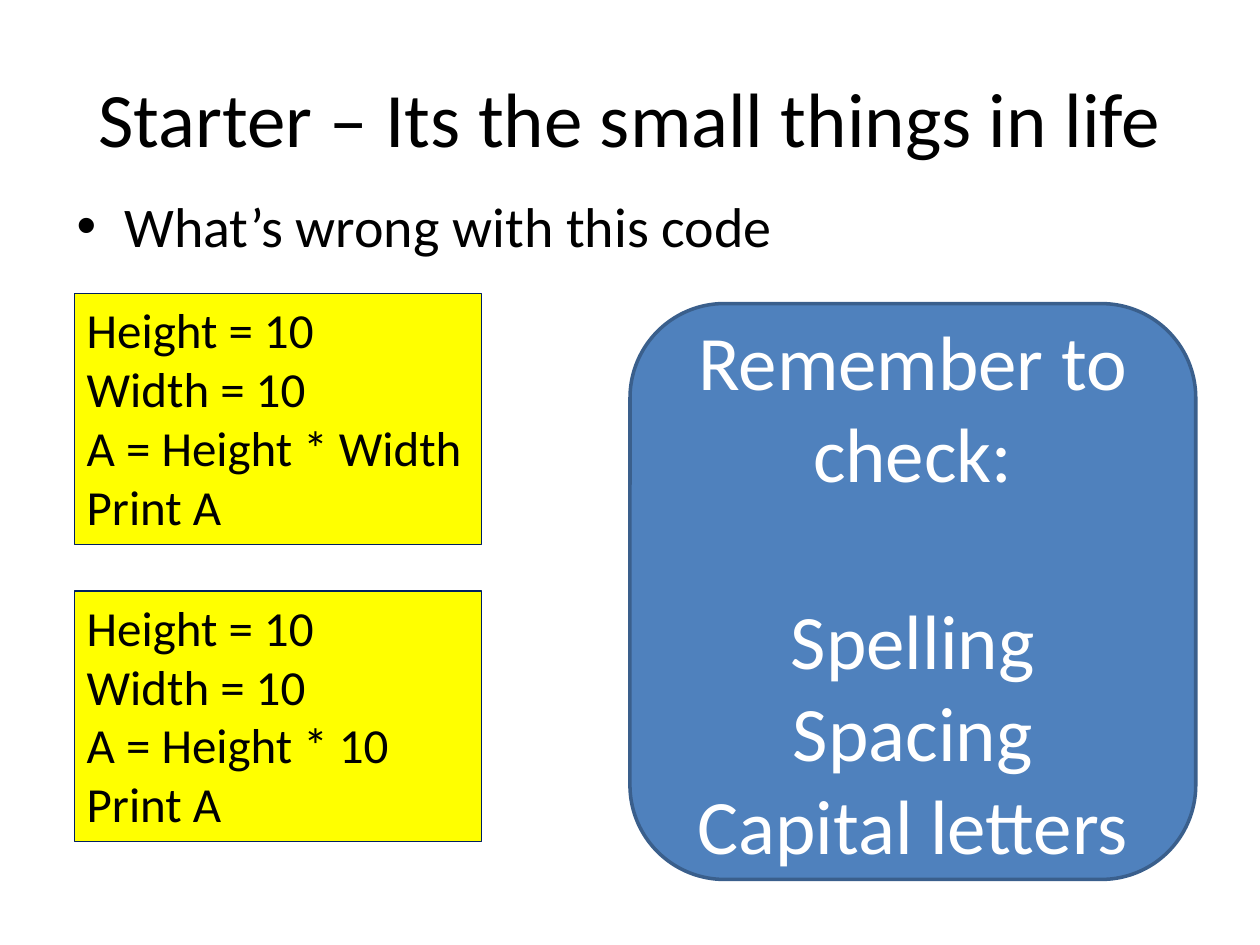
"""Build the starter slide about spotting small mistakes in code."""
from lxml.etree import SubElement
from pptx import Presentation
from pptx.dml.color import RGBColor
from pptx.enum.shapes import MSO_SHAPE as SHAPE
from pptx.enum.text import MSO_ANCHOR as ANCHOR, PP_ALIGN as ALIGN
from pptx.oxml.ns import qn
from pptx.util import Inches, Pt

TITLE = "Starter – Its the small things in life"
QUESTION = "What’s wrong with this code"
SNIPPETS = [
    ["Height = 10", "Width = 10", "A = Height * Width", "Print A"],
    ["Height = 10", "Width = 10", "A = Height * 10", "Print A"],
]
REMINDER = "Remember to check:"
CHECKS = ["Spelling", "Spacing", "Capital letters"]

FONT = "Calibri"
BLACK = RGBColor(0x00, 0x00, 0x00)
WHITE = RGBColor(0xFF, 0xFF, 0xFF)
YELLOW = RGBColor(0xFF, 0xFF, 0x00)
NAVY = RGBColor(0x00, 0x20, 0x60)
BLUE = RGBColor(0x4F, 0x81, 0xBD)
DARK_BLUE = RGBColor(0x3A, 0x5F, 0x8C)

SNIPPET_TOP, SNIPPET_STEP = 2.33, 2.36
CHECKS_GAP = Pt(53.7)


def write(frame, lines, size, color, align, anchor):
    frame.word_wrap = True
    frame.vertical_anchor = anchor
    for index, line in enumerate(lines):
        paragraph = frame.paragraphs[0] if index == 0 else frame.add_paragraph()
        paragraph.alignment = align
        run = paragraph.add_run()
        run.text = line
        run.font.name = FONT
        run.font.size = Pt(size)
        run.font.color.rgb = color


def add_panel(slide, kind, box, fill, line, line_width):
    panel = slide.shapes.add_shape(kind, *map(Inches, box))
    panel.shadow.inherit = False
    panel.fill.solid()
    panel.fill.fore_color.rgb = fill
    panel.line.color.rgb = line
    panel.line.width = Pt(line_width)
    return panel.text_frame


def add_bullet(paragraph, indent):
    properties = paragraph._p.get_or_add_pPr()
    properties.set("marL", str(indent))
    properties.set("indent", str(-indent))
    SubElement(properties, qn("a:buFont"), typeface="Arial")
    SubElement(properties, qn("a:buChar"), char="•")


def main():
    deck = Presentation()
    deck.slide_width, deck.slide_height = Inches(10), Inches(7.5)
    slide = deck.slides.add_slide(deck.slide_layouts[5])

    title = slide.shapes.title
    title.left, title.top, title.width, title.height = map(Inches, (0.5, 0.3, 9, 1.25))
    write(title.text_frame, [TITLE], 44, BLACK, ALIGN.CENTER, ANCHOR.MIDDLE)

    question = slide.shapes.add_textbox(*map(Inches, (0.51, 1.47, 9, 0.79))).text_frame
    write(question, [QUESTION], 32, BLACK, ALIGN.LEFT, ANCHOR.TOP)
    add_bullet(question.paragraphs[0], Inches(0.38))

    for index, code in enumerate(SNIPPETS):
        box = (0.59, SNIPPET_TOP + index * SNIPPET_STEP, 3.23, 1.99)
        snippet = add_panel(slide, SHAPE.RECTANGLE, box, YELLOW, NAVY, 0.75)
        write(snippet, code, 28, BLACK, ALIGN.LEFT, ANCHOR.TOP)

    checklist = add_panel(slide, SHAPE.ROUNDED_RECTANGLE, (5, 2.41, 4.49, 4.57), BLUE, DARK_BLUE, 2)
    write(checklist, [REMINDER, *CHECKS], 44, WHITE, ALIGN.CENTER, ANCHOR.MIDDLE)
    checklist.paragraphs[1].space_before = CHECKS_GAP

    deck.save("out.pptx")


if __name__ == "__main__":
    main()
